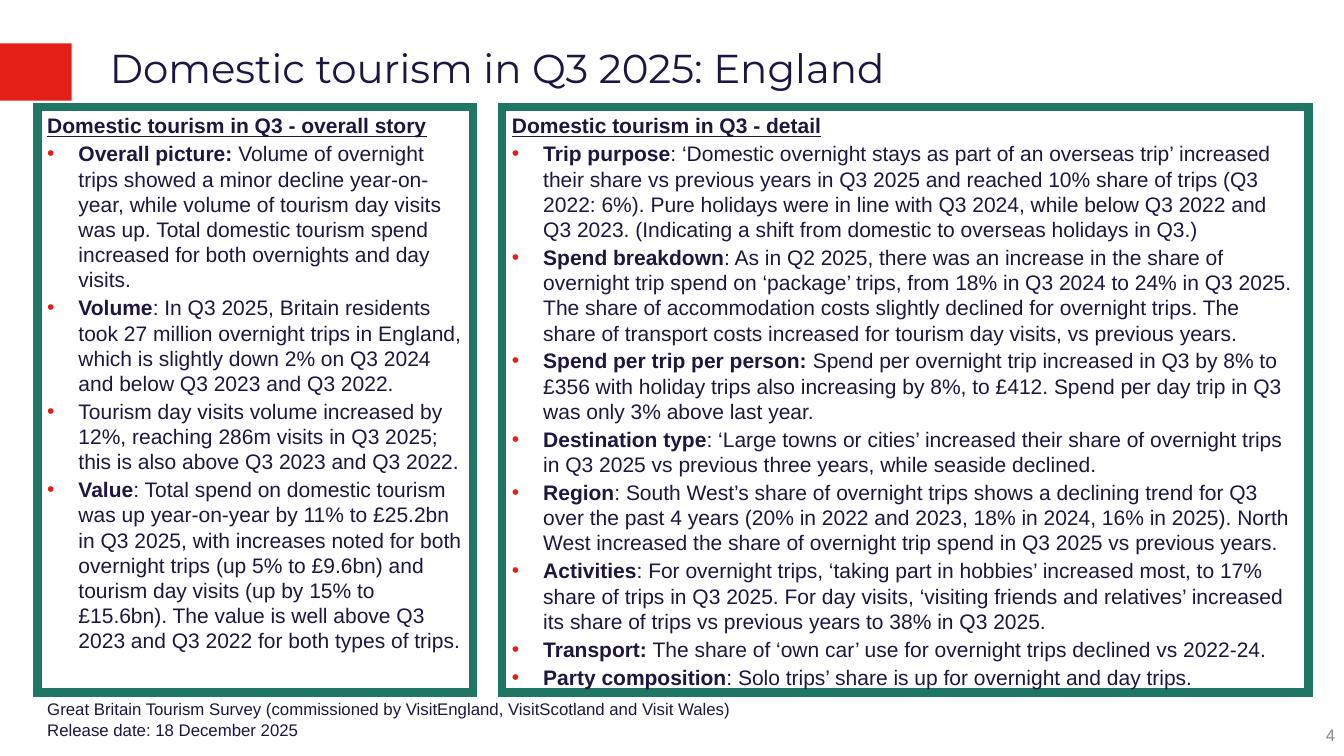
from lxml import etree
from pptx import Presentation
from pptx.dml.color import RGBColor
from pptx.enum.shapes import MSO_SHAPE
from pptx.enum.text import MSO_ANCHOR, PP_ALIGN
from pptx.oxml.ns import qn
from pptx.util import Inches, Pt

COLOURS = {"navy": "1E1541", "red": "E41F18", "green": "1E7663",
           "white": "FFFFFF", "grey": "8C8C8C"}

# Each point is a bold lead and the text that follows it
STORY = [
    ("Overall picture: ", "Volume of overnight trips showed a minor decline year-on-year, while "
     "volume of tourism day visits was up. Total domestic tourism spend increased for both "
     "overnights and day visits."),
    ("Volume", ": In Q3 2025, Britain residents took 27 million overnight trips in England, "
     "which is slightly down 2% on Q3 2024 and below Q3 2023 and Q3 2022."),
    ("", "Tourism day visits volume increased by 12%, reaching 286m visits in Q3 2025; "
     "this is also above Q3 2023 and Q3 2022."),
    ("Value", ": Total spend on domestic tourism was up year-on-year by 11% to £25.2bn in Q3 2025, "
     "with increases noted for both overnight trips (up 5% to £9.6bn) and tourism day visits "
     "(up by 15% to £15.6bn). The value is well above Q3 2023 and Q3 2022 for both types of trips."),
]
DETAIL = [
    ("Trip purpose", ": ‘Domestic overnight stays as part of an overseas trip’ increased their "
     "share vs previous years in Q3 2025 and reached 10% share of trips (Q3 2022: 6%). Pure "
     "holidays were in line with Q3 2024, while below Q3 2022 and Q3 2023. (Indicating a shift "
     "from domestic to overseas holidays in Q3.)"),
    ("Spend breakdown", ": As in Q2 2025, there was an increase in the share of overnight trip "
     "spend on ‘package’ trips, from 18% in Q3 2024 to 24% in Q3 2025. The share of accommodation "
     "costs slightly declined for overnight trips. The share of transport costs increased for "
     "tourism day visits, vs previous years."),
    ("Spend per trip per person: ", "Spend per overnight trip increased in Q3 by 8% to £356 with "
     "holiday trips also increasing by 8%, to £412. Spend per day trip in Q3 was only 3% above "
     "last year."),
    ("Destination type", ": ‘Large towns or cities’ increased their share of overnight trips in "
     "Q3 2025 vs previous three years, while seaside declined."),
    ("Region", ": South West’s share of overnight trips shows a declining trend for Q3 over the "
     "past 4 years (20% in 2022 and 2023, 18% in 2024, 16% in 2025). North West increased the "
     "share of overnight trip spend in Q3 2025 vs previous years."),
    ("Activities", ": For overnight trips, ‘taking part in hobbies’ increased most, to 17% share "
     "of trips in Q3 2025. For day visits, ‘visiting friends and relatives’ increased its share "
     "of trips vs previous years to 38% in Q3 2025."),
    ("Transport:", " The share of ‘own car’ use for overnight trips declined vs 2022-24."),
    ("Party composition", ": Solo trips’ share is up for overnight and day trips."),
]
FOOTER = ["Great Britain Tourism Survey (commissioned by VisitEngland, VisitScotland and Visit Wales)",
          "Release date: 18 December 2025"]


def colour(name):
    return RGBColor.from_string(COLOURS[name])


def add_span(para, text, size, tint="navy", face="Arial", bold=False, underline=False):
    span = para.add_run()
    span.text = text
    font = span.font
    font.size, font.name, font.bold, font.underline = Pt(size), face, bold, underline
    font.color.rgb = colour(tint)


def add_bullet(para):
    properties = para._p.get_or_add_pPr()
    properties.set("marL", str(Inches(0.31)))
    properties.set("indent", str(-Inches(0.31)))
    tint = etree.SubElement(properties, qn("a:buClr"))
    etree.SubElement(tint, qn("a:srgbClr"), val=COLOURS["red"])
    etree.SubElement(properties, qn("a:buFont"), typeface="Arial")
    etree.SubElement(properties, qn("a:buChar"), char="•")


def add_rectangle(page, left, top, width, height, fill=None, line=None):
    box = page.shapes.add_shape(MSO_SHAPE.RECTANGLE, Inches(left), Inches(top),
                                Inches(width), Inches(height))
    box.shadow.inherit = False
    if fill:
        box.fill.solid()
        box.fill.fore_color.rgb = colour(fill)
    else:
        box.fill.background()
    if line:
        box.line.color.rgb = colour(line)
        box.line.width = Pt(6)
        # Square corners
        outline = box._element.spPr.find(qn("a:ln"))
        etree.SubElement(outline, qn("a:miter"), lim="800000")
    else:
        box.line.fill.background()
    return box


def add_panel(page, left, width, heading, points, fill=None, right_margin=0.1):
    frame = add_rectangle(page, left, 1.06, width, 5.81, fill, "green").text_frame
    frame.word_wrap = True
    frame.vertical_anchor = MSO_ANCHOR.TOP
    frame.margin_top = Inches(0.06)
    frame.margin_right = Inches(right_margin)
    title = frame.paragraphs[0]
    add_span(title, heading, 15, bold=True, underline=True)
    for lead, text in points:
        para = frame.add_paragraph()
        add_bullet(para)
        para.space_before = Pt(1)
        if lead:
            add_span(para, lead, 15, bold=True)
        add_span(para, text, 15)
    for para in frame.paragraphs:
        para.alignment = PP_ALIGN.LEFT
        para.space_after = Pt(1)


def add_label(page, left, top, width, height, lines, size, anchor=MSO_ANCHOR.MIDDLE,
              align=PP_ALIGN.LEFT, spacing=1.0, **style):
    frame = page.shapes.add_textbox(Inches(left), Inches(top),
                                    Inches(width), Inches(height)).text_frame
    frame.word_wrap = True
    frame.vertical_anchor = anchor
    frame.margin_top = frame.margin_bottom = 0
    for index, line in enumerate(lines):
        para = frame.add_paragraph() if index else frame.paragraphs[0]
        para.alignment = align
        para.line_spacing = spacing
        add_span(para, line, size, **style)


def main():
    deck = Presentation()
    deck.slide_width, deck.slide_height = Inches(13.33), Inches(7.5)
    page = deck.slides.add_slide(deck.slide_layouts[6])

    # Title with its red marker
    add_rectangle(page, 0, 0.43, 0.71, 0.57, fill="red")
    add_label(page, 0.99, 0.41, 12.18, 0.57, ["Domestic tourism in Q3 2025: England"],
              28.8, spacing=0.9, face="Montserrat")

    # Two framed panels
    add_panel(page, 0.37, 4.32, "Domestic tourism in Q3 - overall story", STORY)
    add_panel(page, 4.98, 8, "Domestic tourism in Q3 - detail", DETAIL, fill="white",
              right_margin=0.13)

    # Source and page number
    add_label(page, 0.37, 6.92, 7.45, 0.42, FOOTER, 12, anchor=MSO_ANCHOR.BOTTOM, spacing=1.04)
    add_label(page, 9.76, 7.09, 3.58, 0.4, ["4"], 12, align=PP_ALIGN.RIGHT, tint="grey")

    deck.save("out.pptx")


if __name__ == "__main__":
    main()
